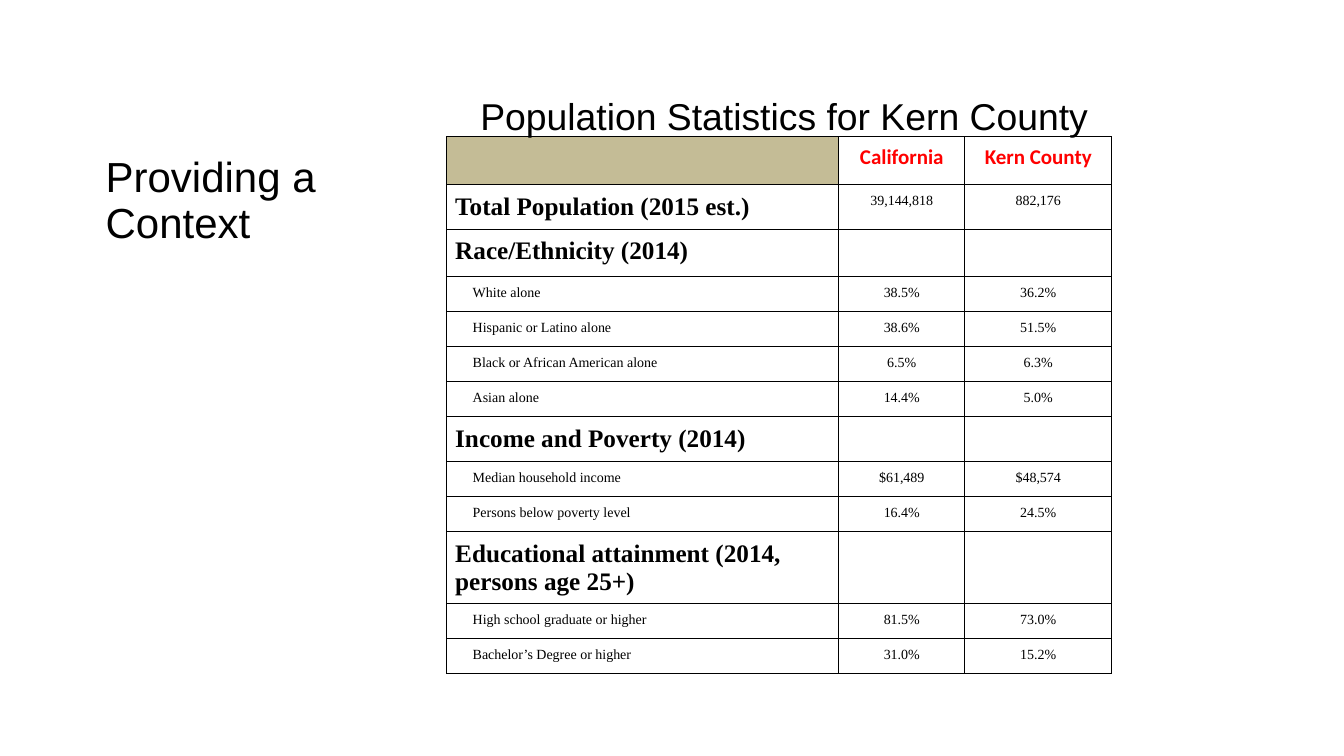
"""Build a slide with population statistics for Kern County."""
import pptx
import pptx.dml.color
import pptx.enum.text
import pptx.oxml
import pptx.oxml.ns
import pptx.util

Pt = pptx.util.Pt
ALIGN = pptx.enum.text.PP_ALIGN
COLORS = {"ink": "000000", "accent": "FF0000", "corner": "C4BC96"}

HEADINGS = [
    ("Providing a Context", 36, (83.5, 141.8, 280.8, 62.6)),
    ("Population Statistics for Kern County", 32, (404.6, 69.8, 609, 62.6)),
]
TABLE_LEFT, TABLE_TOP = 383, 117
COLUMN_WIDTHS = [336, 108, 126]
ROWS = [
    ("header", 41, "", "California", "Kern County"),
    ("section", 38, "Total Population (2015 est.)", "39,144,818", "882,176"),
    ("section", 41, "Race/Ethnicity (2014)", "", ""),
    ("detail", 30, "White alone", "38.5%", "36.2%"),
    ("detail", 30, "Hispanic or Latino alone", "38.6%", "51.5%"),
    ("detail", 30, "Black or African American alone", "6.5%", "6.3%"),
    ("detail", 30, "Asian alone", "14.4%", "5.0%"),
    ("section", 38, "Income and Poverty (2014)", "", ""),
    ("detail", 30, "Median household income", "$61,489", "$48,574"),
    ("detail", 30, "Persons below poverty level", "16.4%", "24.5%"),
    ("section", 62, "Educational attainment (2014, persons age 25+)", "", ""),
    ("detail", 30, "High school graduate or higher", "81.5%", "73.0%"),
    ("detail", 30, "Bachelor’s Degree or higher", "31.0%", "15.2%"),
]
STYLES = {
    "header": ("Calibri", 18, "accent", True),
    "section": ("Times New Roman", 21.6, "ink", True),
    "detail": ("Times New Roman", 12, "ink", False),
}
INSET = 7.2
DETAIL_INDENT = 15


def rgb(name):
    return pptx.dml.color.RGBColor.from_string(COLORS[name])


def add_span(para, text, font, size, color, bold=False):
    span = para.add_run()
    span.text = text
    span.font.name = font
    span.font.size = Pt(size)
    span.font.bold = bold
    span.font.color.rgb = rgb(color)


def set_insets(holder):
    for side in ("left", "top", "right", "bottom"):
        setattr(holder, f"margin_{side}", Pt(INSET))


def add_heading(page, text, size, place):
    box = page.shapes.add_textbox(*map(Pt, place))
    frame = box.text_frame
    frame.word_wrap = True
    frame.vertical_anchor = pptx.enum.text.MSO_ANCHOR.MIDDLE
    set_insets(frame)
    para = frame.paragraphs[0]
    para.line_spacing = 0.9
    add_span(para, text, "Arial", size, "ink")


def add_borders(cell):
    properties = cell._tc.get_or_add_tcPr()
    namespace = pptx.oxml.ns.nsdecls("a")
    for position, side in enumerate("LRTB"):
        border = pptx.oxml.parse_xml(
            f'<a:ln{side} {namespace} w="{Pt(1)}"><a:solidFill>'
            f'<a:srgbClr val="{COLORS["ink"]}"/></a:solidFill></a:ln{side}>'
        )
        properties.insert(position, border)


def fill_cell(cell, text, kind, column):
    set_insets(cell)
    if kind == "header" and column == 0:
        cell.fill.solid()
        cell.fill.fore_color.rgb = rgb("corner")
    else:
        cell.fill.background()
    add_borders(cell)
    para = cell.text_frame.paragraphs[0]
    if column:
        para.alignment = ALIGN.CENTER
    elif kind == "detail":
        para._p.get_or_add_pPr().set("marL", str(Pt(DETAIL_INDENT)))
    if text:
        style = "detail" if column and kind == "section" else kind
        add_span(para, text, *STYLES[style])


def add_statistics(page):
    width = sum(COLUMN_WIDTHS)
    height = sum(row[1] for row in ROWS)
    frame = page.shapes.add_table(
        len(ROWS), len(COLUMN_WIDTHS),
        Pt(TABLE_LEFT), Pt(TABLE_TOP), Pt(width), Pt(height),
    )
    table = frame.table
    table.first_row = False
    table.horz_banding = False
    for column, column_width in zip(table.columns, COLUMN_WIDTHS):
        column.width = Pt(column_width)
    for index, (kind, row_height, *texts) in enumerate(ROWS):
        table.rows[index].height = Pt(row_height)
        for column, text in enumerate(texts):
            fill_cell(table.cell(index, column), text, kind, column)


def main():
    deck = pptx.Presentation()
    deck.slide_width, deck.slide_height = Pt(1152), Pt(648)
    page = deck.slides.add_slide(deck.slide_layouts[6])
    add_statistics(page)
    for heading in HEADINGS:
        add_heading(page, *heading)
    deck.save("out.pptx")


if __name__ == "__main__":
    main()
